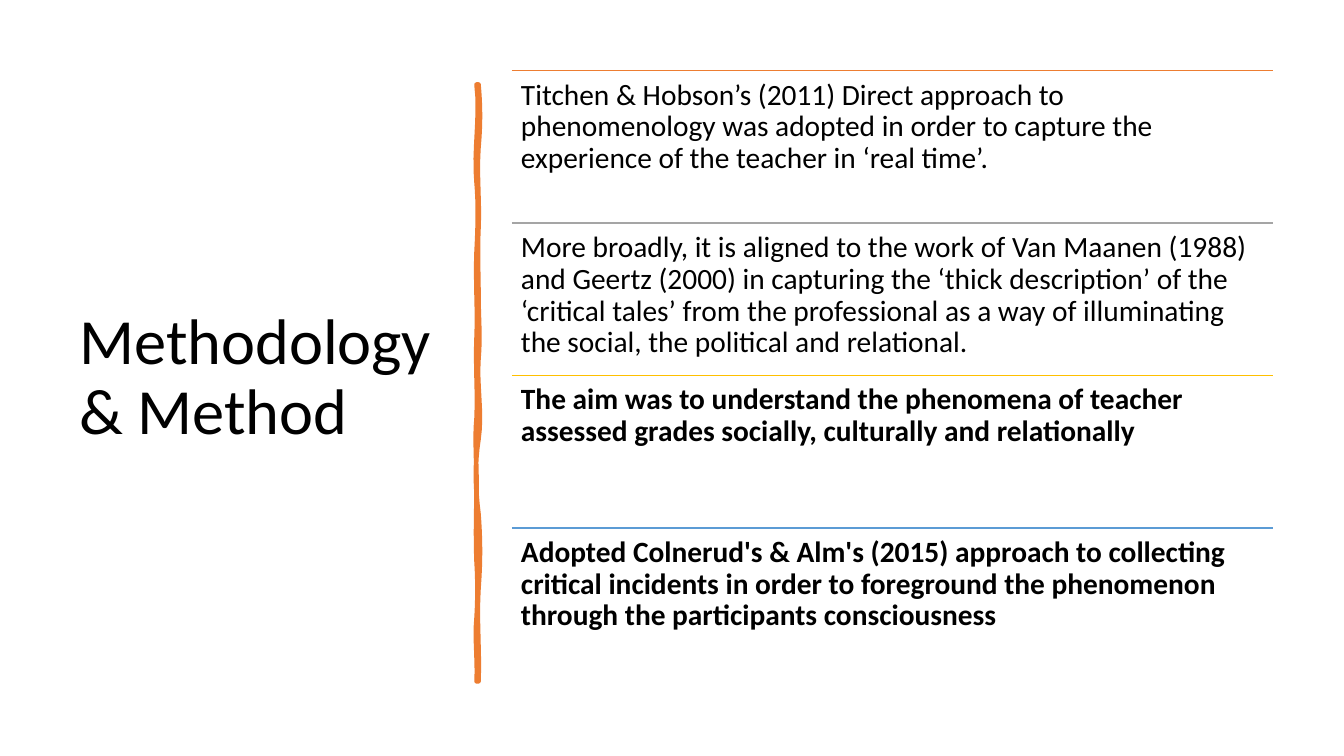
from lxml import etree
from pptx import Presentation
from pptx import util as u
from pptx.dml.color import RGBColor
from pptx.enum import shapes, text
from pptx.oxml.ns import qn

ORANGE = "ED7D31"
LEFT, TOP, WIDTH, STEP = 12.9, 1.78, 19.18, 3.84
STATEMENTS = [
    ("Titchen & Hobson’s (2011) Direct approach to phenomenology was adopted in order "
     "to capture the experience of the teacher in ‘real time’.", ORANGE, False),
    ("More broadly, it is aligned to the work of Van Maanen (1988) and Geertz (2000) in "
     "capturing the ‘thick description’ of the ‘critical tales’ from the professional as "
     "a way of illuminating the social, the political and relational.", "A5A5A5", False),
    ("The aim was to understand the phenomena of teacher assessed grades socially, "
     "culturally and relationally", "FFC000", True),
    ("Adopted Colnerud's & Alm's (2015) approach to collecting critical incidents in "
     "order to foreground the phenomenon through the participants consciousness",
     "5B9BD5", True),
]
BAR_TOP = 2.13
RIGHT_EDGE = [(.05, .05, 3.71), (-.05, .03, 5.74), (-.03, 0, 7.47), (0, .05, 9.04),
              (-.05, .1, 11.07), (-.1, -.08, 12.95), (.05, .05, 14.83), (-.05, .03, 17.17)]
LEFT_EDGE = [(.03, -.05, 15.57), (.03, .03, 14.15), (-.03, 0, 12.12), (0, -.05, 10.54),
             (.03, -.03, 8.51), (.03, -.03, 6.35), (.03, .05, 4.6), (-.08, .1, BAR_TOP)]


def rgb(value):
    """Turn a hex string into a colour."""
    return RGBColor.from_string(value)


def add_text(s, content, x, y, w, h, size, bold=False, inset=0.23,
             anchor=text.MSO_ANCHOR.TOP):
    """Add a wrapped text box with one formatted paragraph."""
    tf = s.shapes.add_textbox(u.Cm(x), u.Cm(y), u.Cm(w), u.Cm(h)).text_frame
    tf.word_wrap = True
    tf.vertical_anchor = anchor
    tf.margin_left = tf.margin_right = tf.margin_top = tf.margin_bottom = u.Cm(inset)
    p = tf.paragraphs[0]
    p.line_spacing = 0.9
    r = p.add_run()
    r.text = content
    r.font.name, r.font.size, r.font.bold = "Calibri", u.Pt(size), bold
    r.font.color.rgb = rgb("000000")


def add_rule(s, x, y, w, color):
    """Add a thin horizontal line."""
    sp = s.shapes.add_connector(shapes.MSO_CONNECTOR.STRAIGHT,
                                u.Cm(x), u.Cm(y), u.Cm(x + w), u.Cm(y))
    sp.line.color.rgb = rgb(color)
    sp.line.width = u.Pt(1)
    etree.SubElement(sp._element.spPr, qn("a:effectLst"))


def wavy_edge(x, y, bends, steps=8):
    """Return the points along a vertical edge that sways by the given bends."""
    points = []
    for first, second, end in bends:
        for i in range(1, steps + 1):
            t = i / steps
            sway = 3 * t * (1 - t) * ((1 - t) * first + t * second)
            points.append((u.Cm(x + sway), u.Cm(y + (end - y) * t)))
        y = end
    return points


def add_wavy_bar(s, left, right, color):
    """Add the hand-drawn vertical bar."""
    bottom = RIGHT_EDGE[-1][-1]
    points = wavy_edge(right, BAR_TOP, RIGHT_EDGE) + [(u.Cm(left), u.Cm(bottom))]
    points += wavy_edge(left, bottom, LEFT_EDGE)
    builder = s.shapes.build_freeform(u.Cm(right), u.Cm(BAR_TOP))
    builder.add_line_segments(points, close=True)
    sp = builder.convert_to_shape()
    sp.shadow.inherit = False
    sp.fill.solid()
    sp.fill.fore_color.rgb = sp.line.color.rgb = rgb(color)
    sp.line.width = u.Pt(3.25)
    etree.SubElement(sp.line._get_or_add_ln(), qn("a:round"))


def main():
    """Build and save the slide."""
    prs = Presentation()
    prs.slide_width, prs.slide_height = u.Cm(33.87), u.Cm(19.05)
    s = prs.slides.add_slide(prs.slide_layouts[6])
    add_text(s, "Methodology & Method", 1.75, 1.78, 9.5, 15.52, 46, inset=0.25,
             anchor=text.MSO_ANCHOR.MIDDLE)
    add_wavy_bar(s, 12.01, 12.06, ORANGE)
    for i, (statement, color, bold) in enumerate(STATEMENTS):
        y = TOP + i * STEP
        add_rule(s, LEFT, y, WIDTH, color)
        add_text(s, statement, LEFT, y, WIDTH, STEP, 21, bold=bold)
    prs.save("out.pptx")


if __name__ == "__main__":
    main()
